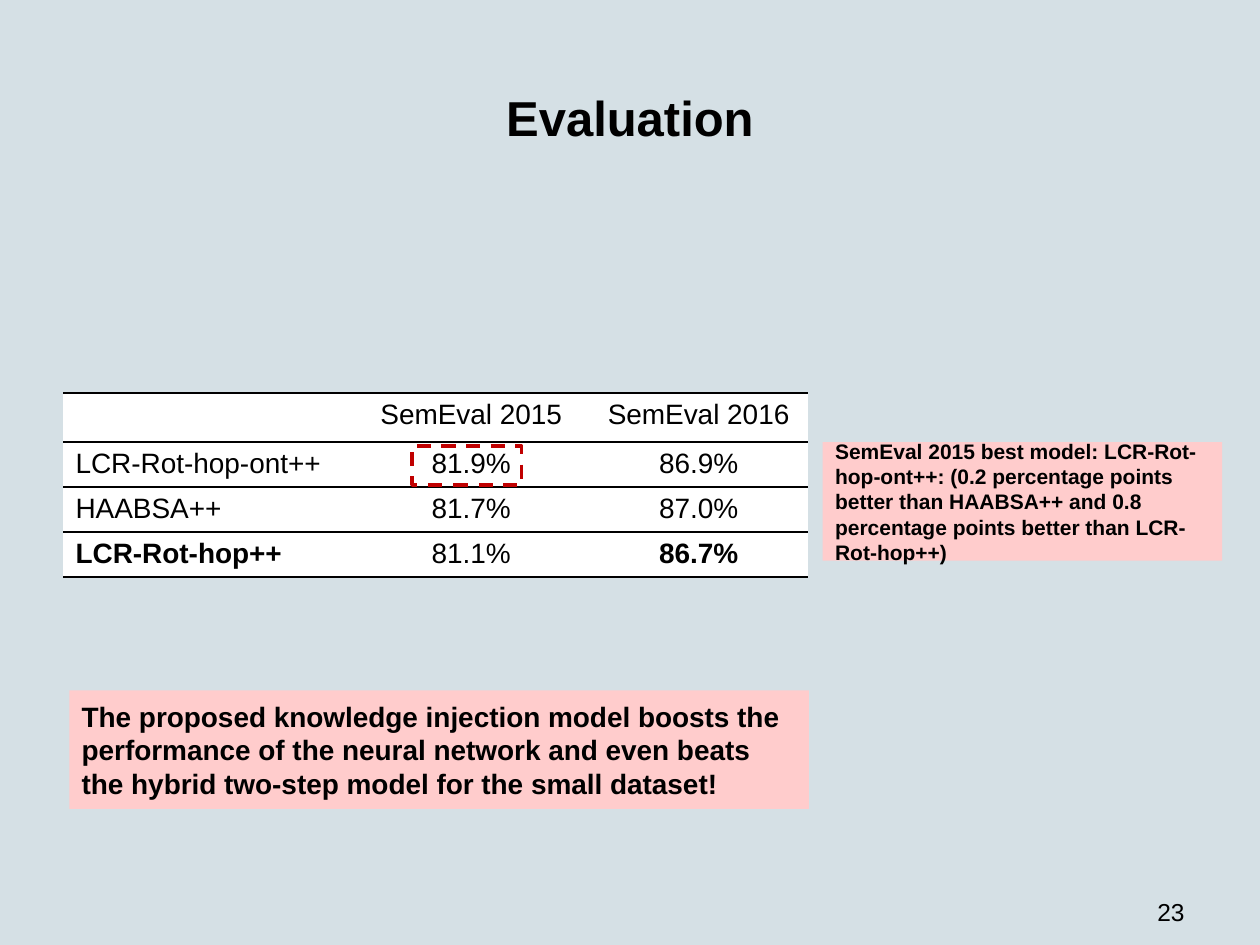
from dataclasses import dataclass

from lxml import etree
from pptx import Presentation
from pptx import util as u
from pptx.dml.color import RGBColor
from pptx.enum import dml, shapes, text
from pptx.oxml.ns import qn

FONT = "Arial"
BLACK, WHITE, PINK, RED, BACKDROP = "000000", "FFFFFF", "FFCCCC", "C00000", "D5E0E5"
CENTER, LEFT, RIGHT = text.PP_ALIGN.CENTER, text.PP_ALIGN.LEFT, text.PP_ALIGN.RIGHT
NO_STYLE = "{2D5ABB26-0587-4C30-8999-92F81FD0307C}"


@dataclass
class Box:
    left: float
    top: float
    width: float
    height: float

    def lengths(self) -> list:
        return [u.Inches(n) for n in (self.left, self.top, self.width, self.height)]


@dataclass
class Callout:
    box: Box
    message: str
    size: int


@dataclass
class Score:
    model: str
    year_2015: str
    year_2016: str
    bold: tuple = (False, False, False)

    def values(self) -> tuple:
        return self.model, self.year_2015, self.year_2016


SCORES = [
    Score("", "SemEval 2015", "SemEval 2016"),
    Score("LCR-Rot-hop-ont++", "81.9%", "86.9%"),
    Score("HAABSA++", "81.7%", "87.0%"),
    Score("LCR-Rot-hop++", "81.1%", "86.7%", (True, False, True)),
]
COLUMN_WIDTHS = (2.3, 1.88, 1.73)
ROW_HEIGHTS = (0.39, 0.35, 0.35, 0.35)
RULED_ABOVE = {0, 1, 2, len(SCORES)}

CALLOUTS = [
    Callout(
        Box(6.53, 3.51, 3.17, 0.94),
        "SemEval 2015 best model: LCR-Rot-hop-ont++: (0.2 percentage points better "
        "than HAABSA++ and 0.8 percentage points better than LCR-Rot-hop++)",
        12,
    ),
    Callout(
        Box(0.55, 5.48, 5.87, 0.94),
        "The proposed knowledge injection model boosts the performance of the neural "
        "network and even beats the hybrid two-step model for the small dataset!",
        16,
    ),
]


def rgb(code: str) -> RGBColor:
    return RGBColor.from_string(code)


def paint(fill, code: str) -> None:
    fill.solid()
    fill.fore_color.rgb = rgb(code)


def write(frame, words: str, size: int, bold: bool, align) -> None:
    frame.text = words
    paragraph = frame.paragraphs[0]
    paragraph.alignment = align
    for run in paragraph.runs:
        run.font.name = FONT
        run.font.size = u.Pt(size)
        run.font.bold = bold
        run.font.color.rgb = rgb(BLACK)


def add_label(slide, box: Box, words: str, size: int, bold: bool, align, anchor):
    frame = slide.shapes.add_textbox(*box.lengths()).text_frame
    frame.word_wrap = True
    frame.vertical_anchor = anchor
    write(frame, words, size, bold, align)
    return frame


def add_rectangle(slide, box: Box):
    rectangle = slide.shapes.add_shape(shapes.MSO_SHAPE.RECTANGLE, *box.lengths())
    rectangle.shadow.inherit = False
    return rectangle


def add_callout(slide, callout: Callout) -> None:
    panel = add_rectangle(slide, callout.box)
    paint(panel.fill, PINK)
    panel.line.fill.background()
    panel.text_frame.word_wrap = True
    panel.text_frame.vertical_anchor = text.MSO_ANCHOR.MIDDLE
    write(panel.text_frame, callout.message, callout.size, True, LEFT)


def add_highlight(slide, box: Box) -> None:
    highlight = add_rectangle(slide, box)
    highlight.fill.background()
    highlight.line.color.rgb = rgb(RED)
    highlight.line.width = u.Pt(2)
    highlight.line.dash_style = dml.MSO_LINE.DASH


def rule_cell(cell, sides: list) -> None:
    properties = cell._tc.get_or_add_tcPr()
    for position, side in enumerate(sides):
        border = etree.Element(qn(f"a:{side}"), w=str(u.Pt(1)))
        solid = etree.SubElement(border, qn("a:solidFill"))
        etree.SubElement(solid, qn("a:srgbClr"), val=BLACK)
        properties.insert(position, border)


def add_scores(slide, left: float, top: float) -> None:
    box = Box(left, top, sum(COLUMN_WIDTHS), sum(ROW_HEIGHTS))
    table = slide.shapes.add_table(
        len(SCORES), len(COLUMN_WIDTHS), *box.lengths()
    ).table
    table.first_row = table.horz_banding = False
    table._tbl.tblPr.find(qn("a:tableStyleId")).text = NO_STYLE
    for column, width in zip(table.columns, COLUMN_WIDTHS):
        column.width = u.Inches(width)
    for r, (score, height) in enumerate(zip(SCORES, ROW_HEIGHTS)):
        table.rows[r].height = u.Inches(height)
        edges = [("lnT", r), ("lnB", r + 1)]
        sides = [side for side, edge in edges if edge in RULED_ABOVE]
        for c, (value, bold) in enumerate(zip(score.values(), score.bold)):
            cell = table.cell(r, c)
            cell.margin_bottom = u.Inches(0.04)
            paint(cell.fill, WHITE)
            write(cell.text_frame, value, 16, bold, CENTER if c else LEFT)
            if not value:
                cell.text_frame.paragraphs[0].font.size = u.Pt(16)
            rule_cell(cell, sides)


def main() -> None:
    deck = Presentation()
    deck.slide_width, deck.slide_height = u.Inches(10), u.Inches(7.5)
    slide = deck.slides.add_slide(deck.slide_layouts[6])
    paint(slide.background.fill, BACKDROP)

    add_label(slide, Box(0.5, 0.3, 9, 1.25), "Evaluation", 28, True, CENTER,
              text.MSO_ANCHOR.MIDDLE)
    page_number = add_label(slide, Box(7.17, 6.83, 2.33, 0.52), "23", 14, False, RIGHT,
                            text.MSO_ANCHOR.BOTTOM)
    page_number.margin_bottom = 0
    add_scores(slide, 0.5, 3.12)
    add_highlight(slide, Box(3.27, 3.54, 0.87, 0.31))
    for callout in CALLOUTS:
        add_callout(slide, callout)
    deck.save("out.pptx")


if __name__ == "__main__":
    main()
